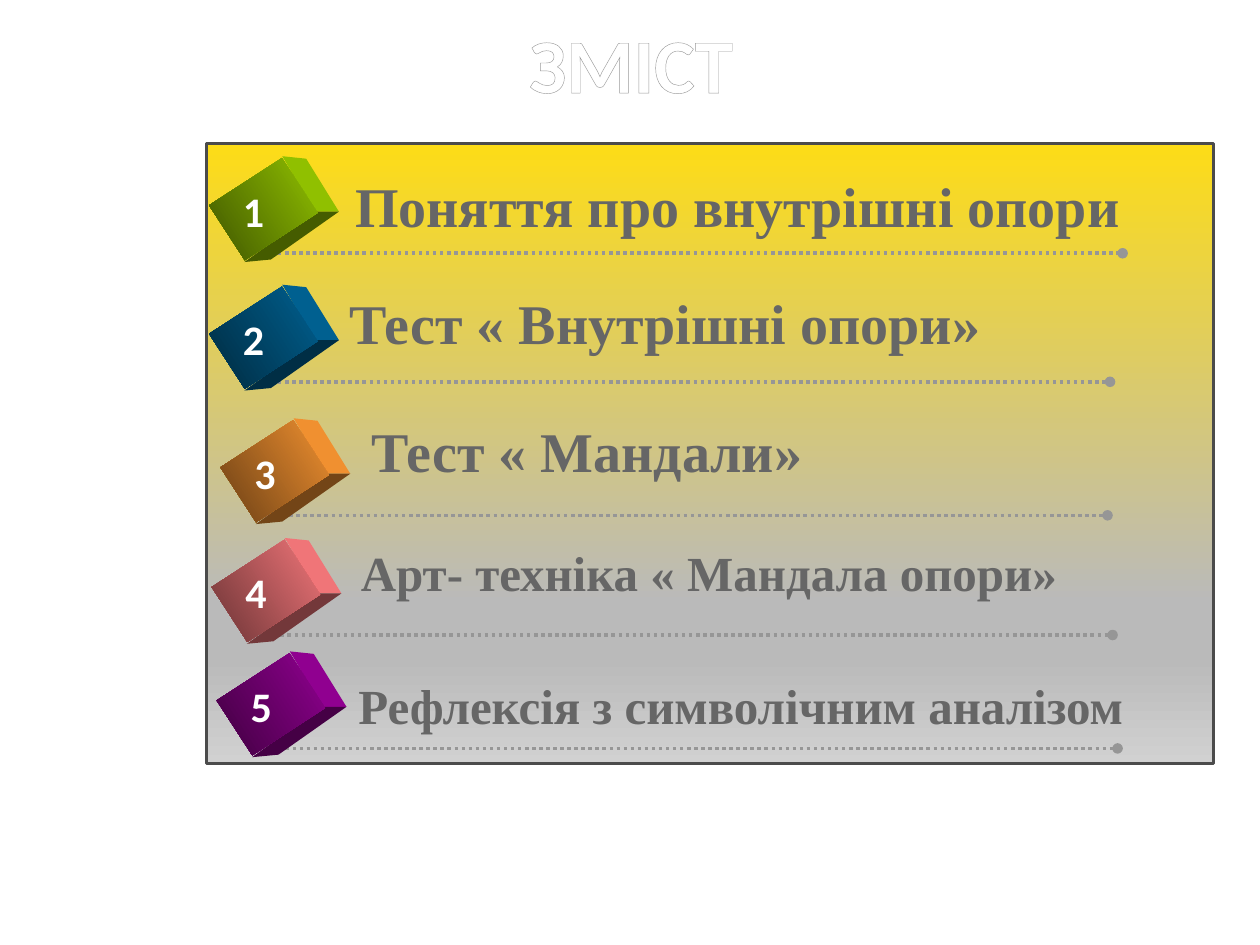
"""Build a contents slide with five numbered blocks."""
from pptx import Presentation
from pptx.dml.color import RGBColor as RGB
from pptx.enum.dml import MSO_LINE as Dash
from pptx.enum.shapes import MSO_CONNECTOR as Link, MSO_SHAPE as Form
from pptx.enum.text import MSO_ANCHOR as Anchor, PP_ALIGN as Align
from pptx.oxml import parse_xml
from pptx.oxml.ns import nsdecls, qn
from pptx.util import Inches, Pt

WHITE = RGB(255, 255, 255)
INK = RGB(0x66, 0x66, 0x66)
RULE = RGB(0x96, 0x96, 0x96)
EDGE = RGB(0x4B, 0x4B, 0x4B)
TRIM = RGB(0x9B, 0x9B, 0x9B)
GREEN = RGB(0x99, 0xCC, 0x00)
BLUE = RGB(0x00, 0x66, 0x99)
AMBER = RGB(0xFF, 0x99, 0x33)
PINK = RGB(0xFF, 0x7C, 0x80)
PLUM = RGB(0x99, 0x00, 0x99)
GOLD = RGB(0xFD, 0xDC, 0x17)
GREY = RGB(0xBA, 0xBA, 0xBA)
PALE = RGB(0xD1, 0xD1, 0xD1)

HEAD = "ЗМІСТ"
PANEL = [(0, GOLD), (74, GREY), (83, GREY), (100, PALE)]
# Text, size, text box (left, top, width), block centre (x, y), rule end, colour
ITEMS = [
    ("Поняття про внутрішні опори", 32, (2.69, 1.31, 6.33), (2.09, 1.66), 8.91, GREEN),
    ("Тест « Внутрішні опори»", 32, (2.65, 2.24, 5.26), (2.09, 2.68), 8.81, BLUE),
    ("Тест « Мандали»", 32, (2.83, 3.26, 3.66), (2.18, 3.74), 8.79, AMBER),
    ("Арт- техніка « Мандала опори»", 28, (2.73, 4.26, 5.79), (2.11, 4.69), 8.83, PINK),
    ("Рефлексія з символічним аналізом", 28, (2.71, 5.31, 6.34), (2.15, 5.59), 8.87, PLUM),
]
SIDES = [
    (0.94, [(0.15, -0.42), (0.34, -0.4), (0.6, 0.02), (0.41, 0.02)]),
    (0.45, [(0.41, 0.02), (0.6, 0.02), (0.06, 0.4), (-0.15, 0.42)]),
]


def shade(hue, part):
    return RGB(*(round(v * part) for v in hue))


def blend(shape, stops):
    marks = "".join(
        f'<a:gs pos="{pos * 1000}"><a:srgbClr val="{hue}"/></a:gs>' for pos, hue in stops)
    shape.element.spPr.insert(2, parse_xml(
        f'<a:gradFill {nsdecls("a")} rotWithShape="1"><a:gsLst>{marks}</a:gsLst>'
        '<a:lin ang="5400000" scaled="0"/></a:gradFill>'))


def rect(shapes, left, top, wide, high, stops):
    shape = shapes.add_shape(Form.RECTANGLE, *map(Inches, (left, top, wide, high)))
    shape.shadow.inherit = False
    blend(shape, stops)
    return shape


def write(para, text, size, face, hue):
    run = para.add_run()
    run.text = text
    font = run.font
    font.size, font.name, font.bold = Pt(size), face, True
    font.color.rgb = hue
    return run


def label(shapes, box, text, size, face, hue, align):
    frame = shapes.add_textbox(*map(Inches, box)).text_frame
    frame.word_wrap = False
    para = frame.paragraphs[0]
    para.alignment = align
    write(para, text, size, face, hue)


def rule(shapes, left, right, y):
    line = shapes.add_connector(Link.STRAIGHT, *map(Inches, (left, y, right, y)))
    line.line.color.rgb, line.line.width = RULE, Pt(2)
    line.line.dash_style = Dash.ROUND_DOT
    props = line.element.spPr
    props.find(qn("a:ln")).append(parse_xml(f'<a:tailEnd {nsdecls("a")} type="oval"/>'))
    props.append(parse_xml(f'<a:effectLst {nsdecls("a")}/>'))


def block(shapes, x, y, hue):
    for part, ends in SIDES:
        dots = [(Inches(x + dx), Inches(y + dy)) for dx, dy in ends]
        pen = shapes.build_freeform(*dots[0])
        pen.add_line_segments(dots[1:], close=True)
        side = pen.convert_to_shape()
        side.shadow.inherit = False
        side.fill.solid()
        side.fill.fore_color.rgb = shade(hue, part)
        side.line.fill.background()
    wide, high = 0.52, 0.69
    front = rect(shapes, x - wide / 2, y - high / 2, wide, high,
                 [(0, shade(hue, 0.94)), (100, shade(hue, 0.42))])
    front.rotation = 57
    front.line.fill.background()


def main():
    deck = Presentation()
    deck.slide_width, deck.slide_height = Inches(10), Inches(7.5)
    slide = deck.slides.add_slide(deck.slide_layouts[5])
    shapes = slide.shapes
    title = shapes.title
    panel = rect(shapes, 1.64, 1.14, 7.99, 4.92, PANEL)
    panel.line.color.rgb, panel.line.width = EDGE, Pt(2)
    title.element.addprevious(panel.element)

    title.left, title.top, title.width, title.height = map(Inches, (0.51, -0.13, 9, 1.25))
    title.text_frame.vertical_anchor = Anchor.MIDDLE
    para = title.text_frame.paragraphs[0]
    para.alignment = Align.CENTER
    run = write(para, HEAD, 44, "Calibri", WHITE)
    run.font.element.insert(0, parse_xml(
        f'<a:ln {nsdecls("a")} w="6600"><a:solidFill><a:srgbClr val="{TRIM}"/>'
        '</a:solidFill></a:ln>')) if hasattr(run.font, "element") else \
        para.runs[0].font._element.insert(0, parse_xml(
            f'<a:ln {nsdecls("a")} w="6600"><a:solidFill><a:srgbClr val="{TRIM}"/>'
            '</a:solidFill></a:ln>')) if hasattr(run.font, "_element") else \
        title.element.find(".//" + qn("a:rPr")).insert(0, parse_xml(
            f'<a:ln {nsdecls("a")} w="6600"><a:solidFill><a:srgbClr val="{TRIM}"/>'
            '</a:solidFill></a:ln>'))

    for num, (_, _, _, (x, y), end, hue) in enumerate(ITEMS, 1):
        group = shapes.add_group_shape().shapes
        rule(group, x + 0.06, end, y + 0.35)
        block(group, x, y, hue)
        label(group, (x - 0.26, y - 0.24, 0.5, 0.5), str(num), 24, "Calibri", WHITE, Align.LEFT)
    for text, size, box, *_ in ITEMS:
        label(shapes, (*box, size / 50), text, size, "Times New Roman", INK, Align.CENTER)
    deck.save("out.pptx")


if __name__ == "__main__":
    main()
